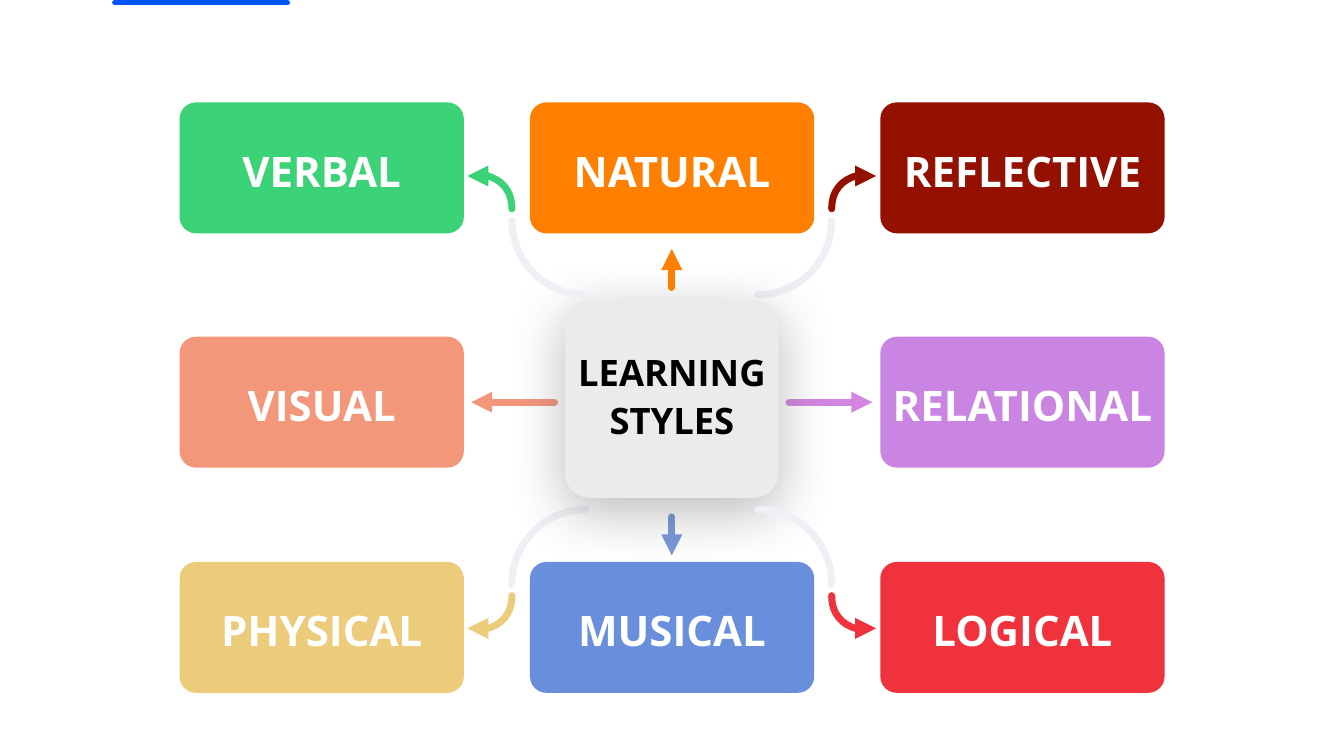
from lxml import etree
from pptx import Presentation
from pptx import util as u
from pptx.dml.color import RGBColor
from pptx.enum import shapes, text
from pptx.oxml.ns import qn

COLOURS = {
    "accent": "0056FB", "white": "FFFFFF", "black": "000000",
    "hub": "EBEBEB", "shadow": "535353", "stem": "EFEFF5",
    "verbal": "3CD278", "natural": "FF8000", "reflective": "941100",
    "visual": "F3977B", "relational": "CA84E1",
    "physical": "ECCC7B", "musical": "698FDC", "logical": "F0323C",
    "visual arrow": "F3967B", "relational arrow": "D286E0", "musical arrow": "7898D9",
}
CENTRE_X, CENTRE_Y = 33.86, 20.27
CARD_LEFT, CARD_PITCH, CARD_WIDTH, CARD_HEIGHT = 9.05, 17.66, 14.33, 6.6
LABEL_HEIGHT = 2.9
TOP, MIDDLE, BOTTOM = 5.16, 16.97, 28.32
CARDS = [
    ("REFLECTIVE", 2, TOP, 12.4), ("RELATIONAL", 2, MIDDLE, 13.39),
    ("LOGICAL", 2, BOTTOM, 9.47), ("MUSICAL", 1, BOTTOM, 11.3),
    ("VERBAL", 0, TOP, 8.23), ("VISUAL", 0, MIDDLE, 8.23),
    ("PHYSICAL", 0, BOTTOM, 11.51), ("NATURAL", 1, TOP, 9.98),
]
STEM = [(4.33, 5.41), (6.39, 5.41), (8.06, 7.09), (8.06, 9.17)]
HOOK = [
    (8.06, 9.75), (8.06, 10.69), (8.82, 11.48), (9.78, 11.48),
    (9.94, 11.48), (10.12, 11.46), (10.3, 11.4),
]


def colour(name):
    return RGBColor.from_string(COLOURS[name])


def write(frame, content, size=60, ink="white", anchor=text.MSO_ANCHOR.MIDDLE):
    frame.word_wrap = True
    frame.auto_size = text.MSO_AUTO_SIZE.SHAPE_TO_FIT_TEXT
    frame.vertical_anchor = anchor
    frame.margin_left = frame.margin_right = u.Cm(0)
    frame.margin_top = frame.margin_bottom = u.Cm(0)
    para = frame.paragraphs[0]
    para.alignment = text.PP_ALIGN.CENTER
    para.line_spacing = 1.1
    span = para.add_run()
    span.text = content
    span.font.name = "Open Sans"
    span.font.size = u.Pt(size)
    span.font.bold = True
    span.font.color.rgb = colour(ink)


def bend(outline):
    segments = outline.findall(qn("a:lnTo"))
    for first in range(0, len(segments), 3):
        cubic = etree.SubElement(outline, qn("a:cubicBezTo"))
        for segment in segments[first:first + 3]:
            cubic.append(segment[0])
            outline.remove(segment)


class Diagram:
    def __init__(self, page, stroke=10, corner=0.126):
        self.page = page
        self.stroke = stroke
        self.corner = corner

    def box(self, left, top, width, height, fill):
        box = self.page.shapes.add_shape(
            shapes.MSO_SHAPE.ROUNDED_RECTANGLE,
            u.Cm(left), u.Cm(top), u.Cm(width), u.Cm(height))
        box.adjustments[0] = self.corner
        box.shadow.inherit = False
        box.fill.solid()
        box.fill.fore_color.rgb = colour(fill)
        box.line.fill.background()
        return box

    def label(self, left, top, width, height, content, **style):
        label = self.page.shapes.add_textbox(
            u.Cm(left), u.Cm(top), u.Cm(width), u.Cm(height))
        write(label.text_frame, content, **style)

    def card(self, content, column, top, label_width):
        left = CARD_LEFT + column * CARD_PITCH
        self.box(left, top, CARD_WIDTH, CARD_HEIGHT, content.lower())
        self.label(left + (CARD_WIDTH - label_width) / 2,
                   top + (CARD_HEIGHT - LABEL_HEIGHT) / 2,
                   label_width, LABEL_HEIGHT, content)

    def hub(self):
        box = self.box(28.47, 15.11, 10.77, 9.98, "hub")
        effects = box._element.spPr.find(qn("a:effectLst"))
        shadow = etree.SubElement(
            effects, qn("a:outerShdw"), blurRad=str(u.Pt(80)), dist=str(u.Pt(20)),
            dir="5400000", algn="ctr", rotWithShape="0")
        tint = etree.SubElement(shadow, qn("a:srgbClr"), val=COLOURS["shadow"])
        etree.SubElement(tint, qn("a:alpha"), val="40000")
        self.label(29, 17.42, 9.73, 5.26, "LEARNING STYLES",
                   size=52, ink="black", anchor=text.MSO_ANCHOR.TOP)

    def outline(self, shape, ink, width, arrow):
        shape.line.color.rgb = colour(ink)
        shape.line.width = u.Pt(width)
        line = shape._element.spPr.find(qn("a:ln"))
        line.set("cap", "rnd")
        etree.SubElement(line, qn("a:round"))
        if arrow:
            etree.SubElement(line, qn("a:tailEnd"), type="triangle")

    def line(self, start, end, ink, width=None, arrow=True):
        line = self.page.shapes.add_connector(
            shapes.MSO_CONNECTOR.STRAIGHT, *(u.Cm(value) for value in (*start, *end)))
        self.outline(line, ink, width or self.stroke, arrow)
        etree.SubElement(line._element.spPr, qn("a:effectLst"))

    def spoke(self, side_x, side_y, ink):
        near, far = (5.91, 10.11) if side_x else (5.78, 7.72)
        start, end = ((CENTRE_X + side_x * reach, CENTRE_Y + side_y * reach)
                      for reach in (near, far))
        self.line(start, end, ink)

    def curve(self, offsets, side_x, side_y, ink, arrow=False):
        points = [(u.Cm(CENTRE_X + side_x * x), u.Cm(CENTRE_Y + side_y * y)) for x, y in offsets]
        builder = self.page.shapes.build_freeform(*points[0])
        builder.add_line_segments(points[1:], close=False)
        arc = builder.convert_to_shape()
        bend(arc._element.spPr.find(".//" + qn("a:path")))
        arc.shadow.inherit = False
        arc.fill.background()
        self.outline(arc, ink, self.stroke, arrow)

    def corner_arrow(self, side_x, side_y, ink):
        self.curve(STEM, side_x, side_y, "stem")
        self.curve(HOOK, side_x, side_y, ink, arrow=True)


def main():
    deck = Presentation()
    deck.slide_width, deck.slide_height = u.Cm(67.74), u.Cm(38.1)
    page = deck.slides.add_slide(deck.slide_layouts[6])
    diagram = Diagram(page)

    diagram.line((5.79, 0.13), (14.48, 0.13), "accent", width=8, arrow=False)
    for card in CARDS:
        diagram.card(*card)

    diagram.corner_arrow(1, -1, "reflective")
    diagram.corner_arrow(-1, 1, "physical")
    diagram.spoke(1, 0, "relational arrow")
    diagram.spoke(-1, 0, "visual arrow")
    diagram.spoke(0, 1, "musical arrow")
    diagram.hub()
    diagram.spoke(0, -1, "natural")
    diagram.corner_arrow(-1, -1, "verbal")
    diagram.corner_arrow(1, 1, "logical")
    deck.save("out.pptx")


if __name__ == "__main__":
    main()
